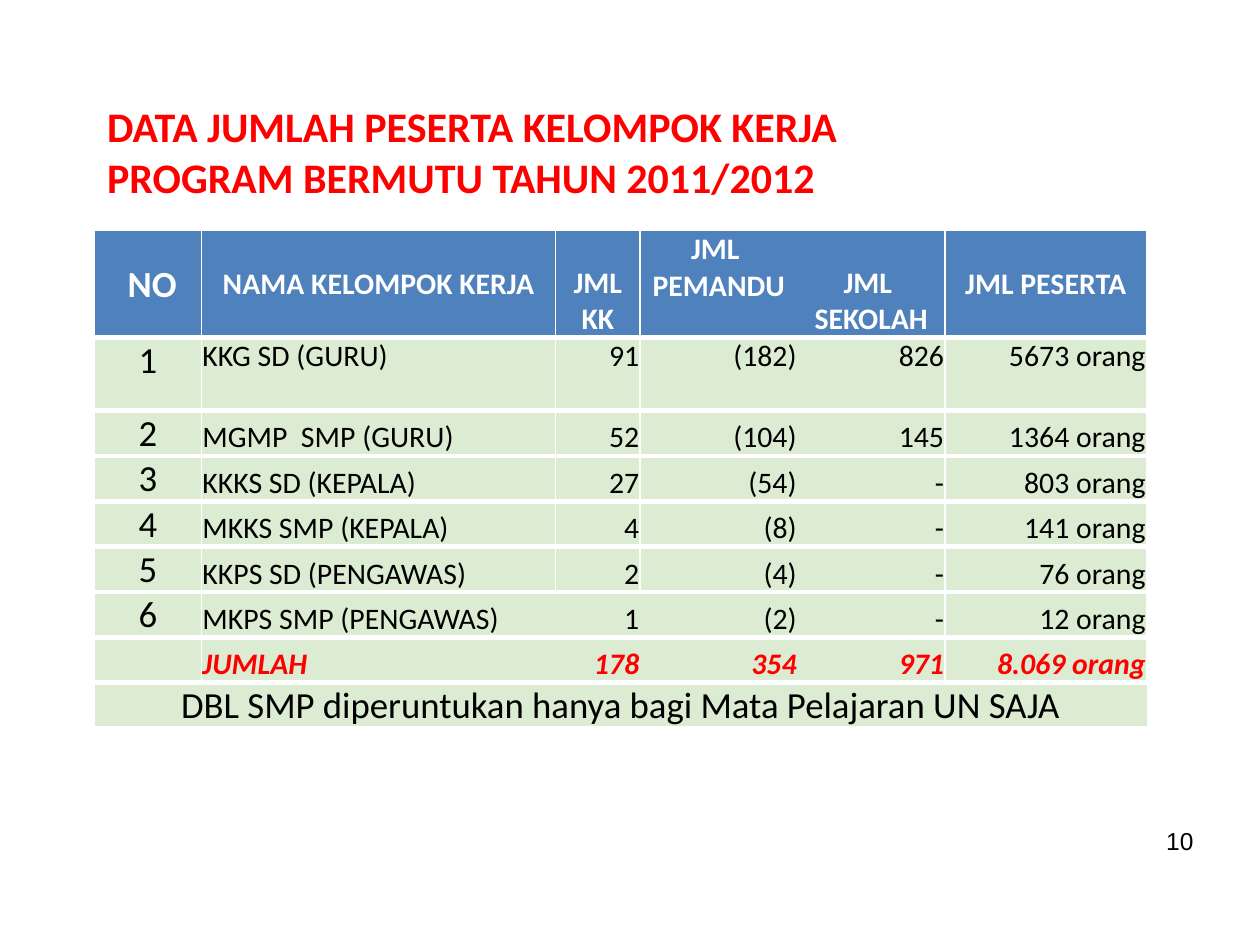
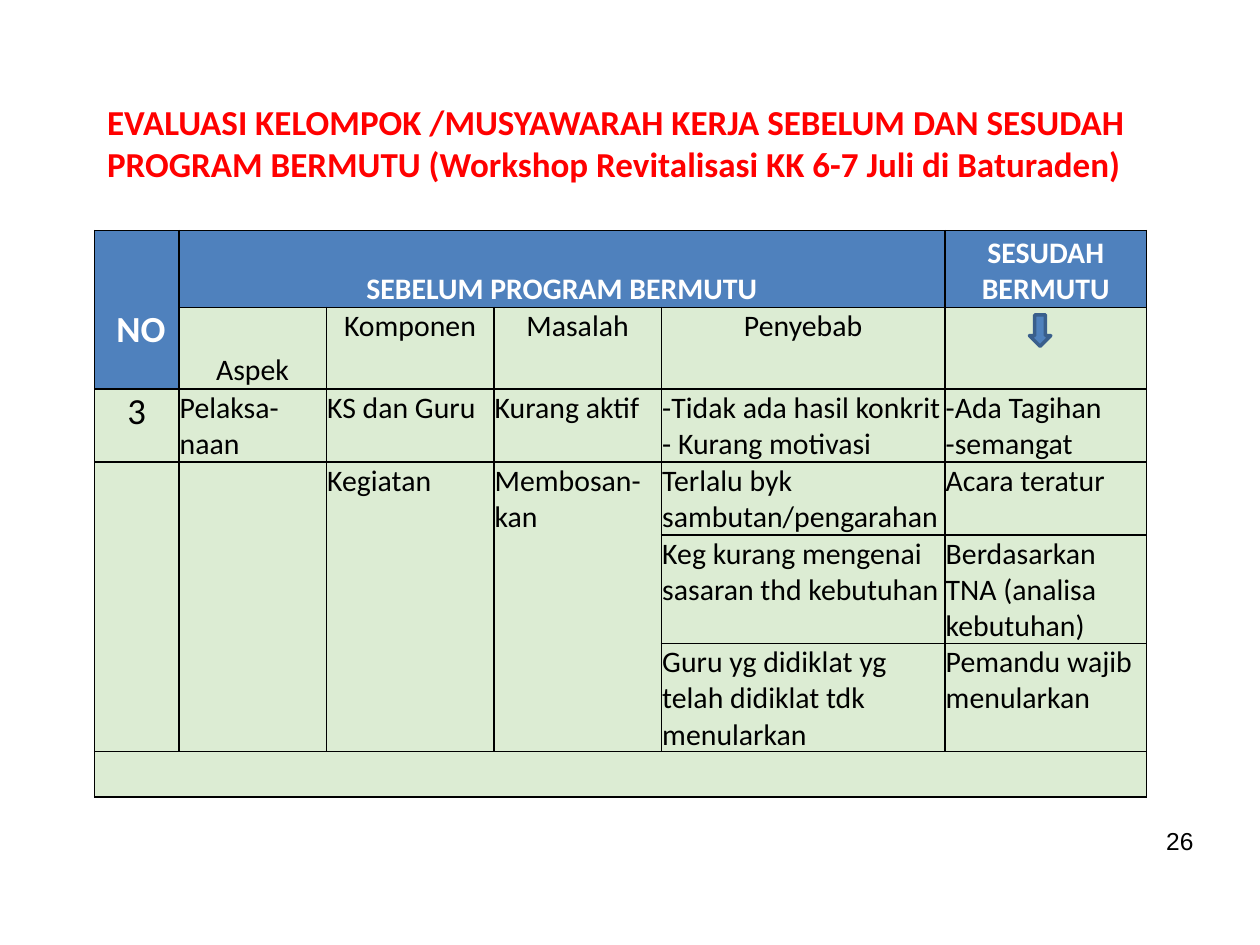
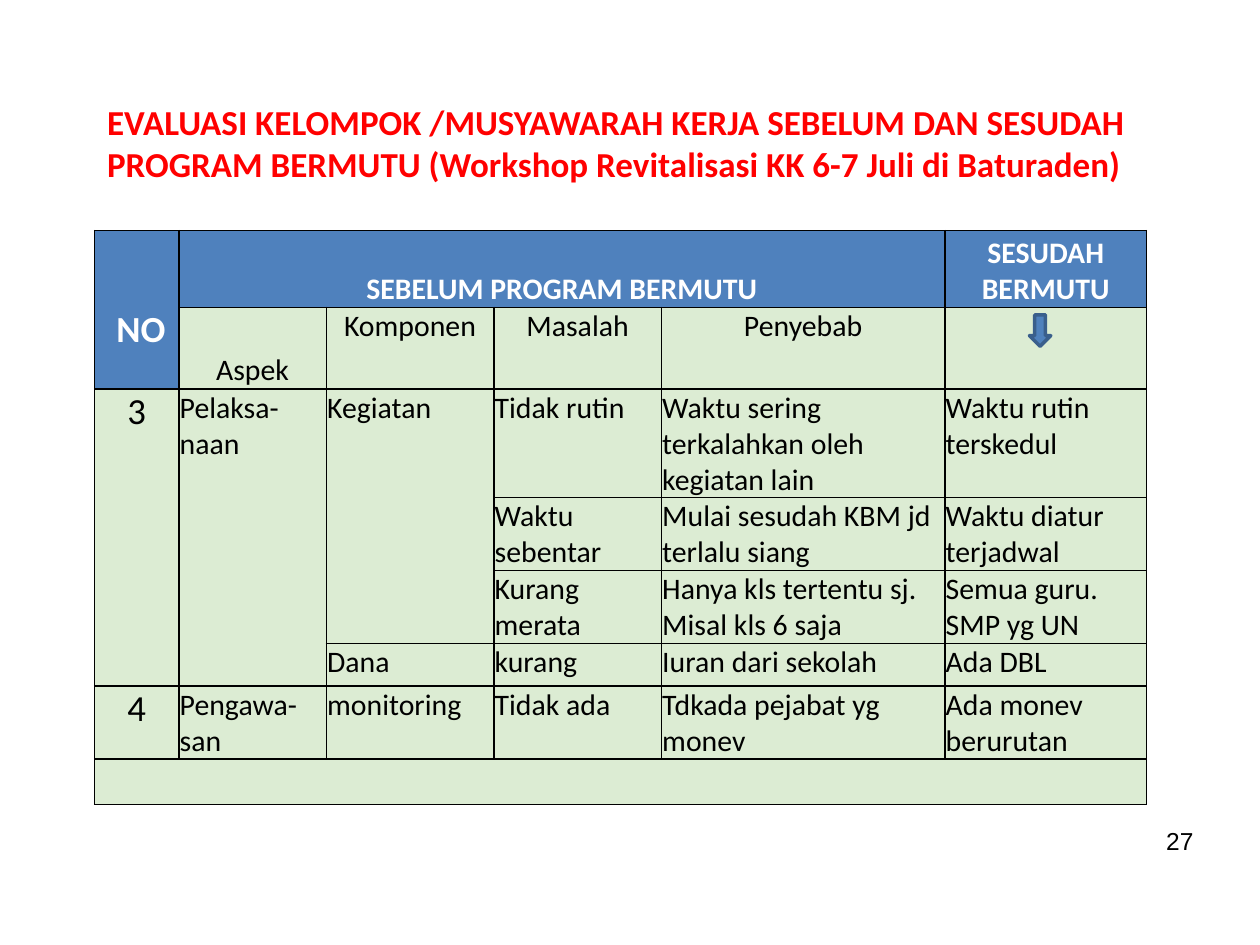
from dataclasses import dataclass, replace
from typing import Optional

from lxml import etree
from pptx import Presentation
from pptx.dml.color import RGBColor
from pptx.enum.shapes import MSO_SHAPE
from pptx.enum.text import MSO_ANCHOR, MSO_AUTO_SIZE, PP_ALIGN
from pptx.oxml.ns import qn
from pptx.util import Inches, Pt

LEFT, CENTER, RIGHT = PP_ALIGN.LEFT, PP_ALIGN.CENTER, PP_ALIGN.RIGHT
TOP, MIDDLE, BOTTOM = MSO_ANCHOR.TOP, MSO_ANCHOR.MIDDLE, MSO_ANCHOR.BOTTOM
DOWN_ARROW = MSO_SHAPE.DOWN_ARROW
NO_AUTOFIT = MSO_AUTO_SIZE.NONE

WHITE = RGBColor(0xFF, 0xFF, 0xFF)
BLACK = RGBColor(0, 0, 0)
RED = RGBColor(0xFF, 0, 0)
BLUE = RGBColor(0x4F, 0x81, 0xBD)
DARK_BLUE = RGBColor(0x3A, 0x5F, 0x8C)
PALE_GREEN = RGBColor(0xDC, 0xEC, 0xD3)

SLIDE_WIDTH, SLIDE_HEIGHT = Inches(10), Inches(7.5)
GRID = 100  # columns and rows of the slide grid
TABLE_LEFT, TABLE_TOP = 7.5, 24.4
TITLE_ONLY = 5
PLAIN_TABLE_STYLE = "{2D5ABB26-0587-4C30-8999-92F81FD0307C}"
NUMBER_SIZE, CELL_SIZE = 21, 17


def across(columns: float) -> int:
    return round(SLIDE_WIDTH * columns / GRID)


def down(rows: float) -> int:
    return round(SLIDE_HEIGHT * rows / GRID)


@dataclass(frozen=True)
class Box:
    """A place on the slide, in grid columns and rows."""
    left: float
    top: float
    width: float
    height: float

    def lengths(self) -> tuple[int, int, int, int]:
        return across(self.left), down(self.top), across(self.width), down(self.height)


@dataclass(frozen=True)
class Entry:
    """A table cell: its text, format and span."""
    text: str = ""
    align: PP_ALIGN = LEFT
    anchor: MSO_ANCHOR = TOP
    size: float = CELL_SIZE
    color: RGBColor = BLACK
    bold: bool = False
    italic: bool = False
    fill: RGBColor = PALE_GREEN
    rows: int = 1
    columns: int = 1
    bottom_gap: float = 0


@dataclass(frozen=True)
class Borders:
    """Line widths in points; a missing line is None."""
    color: RGBColor
    left: Optional[float] = 1
    right: Optional[float] = 1
    top: Optional[float] = 1
    bottom: Optional[float] = 1


PAGE_NUMBER = Box(86.9, 86.8, 8.8, 4.13)
SESUDAH_ARROW = Box(81.7, 33.33, 1.7, 3.33)
BLACK_BORDERS = Borders(BLACK)


def write(frame, text: str, *, size: float, font: str = "Calibri",
          color: RGBColor = BLACK, bold: bool = False, italic: bool = False,
          align: PP_ALIGN = LEFT) -> None:
    """Write one paragraph for each line of the text."""
    for index, line in enumerate(text.split("\n")):
        paragraph = frame.paragraphs[0] if index == 0 else frame.add_paragraph()
        paragraph.alignment = align
        run = paragraph.add_run()
        run.text = line
        run.font.size = Pt(size)
        run.font.name = font
        run.font.color.rgb = color
        run.font.bold = bold
        run.font.italic = italic


def add_titled_slide(deck, title: str, size: float, height: float, page: int):
    slide = deck.slides.add_slide(deck.slide_layouts[TITLE_ONLY])
    heading = slide.shapes.title
    heading.left, heading.top, heading.width, heading.height = Box(7.5, 10, 87.9, height).lengths()
    frame = heading.text_frame
    frame.word_wrap = True
    frame.auto_size = NO_AUTOFIT
    frame.vertical_anchor = TOP
    write(frame, title, size=size, color=RED, bold=True)

    number = slide.shapes.add_textbox(*PAGE_NUMBER.lengths()).text_frame
    number.word_wrap = True
    write(number, str(page), size=14, font="Arial", align=RIGHT)
    return slide


def draw_borders(cell, borders: Borders) -> None:
    properties = cell._tc.get_or_add_tcPr()
    sides = {"a:lnL": borders.left, "a:lnR": borders.right,
             "a:lnT": borders.top, "a:lnB": borders.bottom}
    for tag, width in sides.items():
        line = etree.SubElement(properties, qn(tag), w=str(Pt(width or 0)))
        if width is None:
            etree.SubElement(line, qn("a:noFill"))
        else:
            paint = etree.SubElement(line, qn("a:solidFill"))
            etree.SubElement(paint, qn("a:srgbClr"), val=str(borders.color))


def fill_cell(cell, entry: Entry, borders: Borders) -> None:
    draw_borders(cell, borders)
    cell.fill.solid()
    cell.fill.fore_color.rgb = entry.fill
    cell.margin_left = cell.margin_right = cell.margin_top = Pt(0.5)
    cell.margin_bottom = Inches(entry.bottom_gap)
    cell.vertical_anchor = entry.anchor
    if entry.text:
        write(cell.text_frame, entry.text, size=entry.size, color=entry.color,
              bold=entry.bold, italic=entry.italic, align=entry.align)


def add_grid_table(slide, widths: list[float], heights: list[float],
                   entries: list[list[Optional[Entry]]], borders_at) -> None:
    """Draw a table; None marks a cell covered by a span."""
    box = Box(TABLE_LEFT, TABLE_TOP, sum(widths), sum(heights))
    table = slide.shapes.add_table(len(heights), len(widths), *box.lengths()).table
    table._tbl.tblPr.find(qn("a:tableStyleId")).text = PLAIN_TABLE_STYLE
    table.first_row = table.horz_banding = False
    for column, width in zip(table.columns, widths):
        column.width = across(width)
    for row, height in zip(table.rows, heights):
        row.height = down(height)
    for r, row_entries in enumerate(entries):
        for c, entry in enumerate(row_entries):
            fill_cell(table.cell(r, c), entry or Entry(), borders_at(r, c))
    for r, row_entries in enumerate(entries):
        for c, entry in enumerate(row_entries):
            if entry and (entry.rows, entry.columns) != (1, 1):
                table.cell(r, c).merge(table.cell(r + entry.rows - 1, c + entry.columns - 1))


def header(text: str, anchor: MSO_ANCHOR = BOTTOM, **changes) -> Entry:
    base = Entry(text, CENTER, anchor, color=WHITE, bold=True, fill=BLUE)
    return replace(base, **changes)


def number(text: str, **changes) -> Entry:
    return replace(Entry(text, CENTER, size=NUMBER_SIZE), **changes)


# Participants
PARTICIPANT_WIDTHS = [8.5, 28.1, 6.7, 12.5, 11.7, 16]
PARTICIPANT_HEIGHTS = [11.33, 7.73] + [4.8] * 7
GROUPS = [
    ("KKG SD (GURU)", "91", "(182)", "826", "5673 orang"),
    ("MGMP  SMP (GURU)", "52", "(104)", "145", "1364 orang"),
    ("KKKS SD (KEPALA)", "27", "(54)", "-", "803 orang"),
    ("MKKS SMP (KEPALA)", "4", "(8)", "-", "141 orang"),
    ("KKPS SD (PENGAWAS)", "2", "(4)", "-", "76 orang"),
    ("MKPS SMP (PENGAWAS)", "1", "(2)", "-", "12 orang"),
]
TOTALS = ("JUMLAH", "178", "354", "971", "8.069 orang")


def figures(values: tuple[str, ...], **changes) -> list[Entry]:
    return [replace(Entry(value, RIGHT if c else LEFT, BOTTOM), **changes)
            for c, value in enumerate(values)]


def participant_entries() -> list[list[Optional[Entry]]]:
    rows = [[header(" NO", MIDDLE, size=NUMBER_SIZE),
             header("NAMA KELOMPOK KERJA", MIDDLE), header("JML\nKK"),
             header("JML \nPEMANDU", TOP), header("JML \nSEKOLAH"),
             header("JML PESERTA", MIDDLE)]]
    for order, group in enumerate(GROUPS, 1):
        anchor = TOP if order == 1 else BOTTOM
        rows.append([number(str(order))] + figures(group, anchor=anchor))
    rows.append([Entry()] + figures(TOTALS, color=RED, bold=True, italic=True))
    note = number("DBL SMP diperuntukan hanya bagi Mata Pelajaran UN SAJA", columns=6)
    rows.append([note] + [None] * 5)
    return rows


def participant_borders(row: int, column: int) -> Borders:
    """White rules; the lower rows have fewer column dividers."""
    if row < 6:
        dividers = {0, 1, 2, 3, 5, 6}
    elif row < 8:
        dividers = {0, 1, 5, 6}
    else:
        dividers = {0, 6}
    return Borders(WHITE, left=1 if column in dividers else None,
                   right=1 if column + 1 in dividers else None,
                   top=3 if row else 1, bottom=3)


# Evaluation
EVALUATION_TITLE = ("EVALUASI KELOMPOK /MUSYAWARAH KERJA SEBELUM DAN SESUDAH "
                    "PROGRAM BERMUTU (Workshop Revitalisasi KK 6-7 Juli di Baturaden)")
EVALUATION_WIDTHS = [6.7, 11.7, 13.3, 13.3, 22.5, 16]
HEADER_HEIGHTS = [8.13, 8.53]
FOOT_HEIGHT = 4.8
EVALUATION_HEADER = [
    [header(" NO", size=NUMBER_SIZE, rows=2, bottom_gap=0.29),
     header("SEBELUM PROGRAM BERMUTU", columns=4), None, None, None,
     header("SESUDAH\nBERMUTU")],
    [None, Entry("Aspek", CENTER, BOTTOM)]
    + [Entry(text, CENTER) for text in ("Komponen", "Masalah", "Penyebab", "")],
]
EVALUATION_FOOT = [Entry(columns=6)] + [None] * 5


def texts(*values: str) -> list[Entry]:
    return [Entry(value) for value in values]


IMPLEMENTATION_HEIGHTS = [7.73, 7.73, 11.47, 11.47]
IMPLEMENTATION = [
    [number("3")] + texts("Pelaksa-naan", "KS dan Guru", "Kurang aktif",
                          "-Tidak ada hasil konkrit\n- Kurang motivasi",
                          "-Ada Tagihan\n-semangat"),
    [Entry(rows=3), Entry(rows=3), Entry("Kegiatan", rows=3), Entry("Membosan-kan", rows=3)]
    + texts("Terlalu byk sambutan/pengarahan", "Acara teratur"),
    [None] * 4 + texts("Keg kurang mengenai sasaran thd kebutuhan",
                       "Berdasarkan TNA (analisa kebutuhan)"),
    [None] * 4 + texts("Guru yg didiklat yg telah didiklat tdk menularkan",
                       "Pemandu wajib menularkan"),
]
SUPERVISION_HEIGHTS = [11.47, 7.73, 7.73, 4.53, 7.73]
SUPERVISION = [
    [number("3", rows=4), Entry("Pelaksa-naan", rows=4), Entry("Kegiatan", rows=3)]
    + texts("Tidak rutin", "Waktu sering terkalahkan oleh kegiatan lain",
            "Waktu rutin terskedul"),
    [None] * 3 + texts("Waktu sebentar", "Mulai sesudah KBM jd terlalu siang",
                       "Waktu diatur terjadwal"),
    [None] * 3 + texts("Kurang merata", "Hanya kls tertentu sj. Misal kls 6 saja",
                       "Semua guru.\nSMP yg UN"),
    [None] * 2 + texts("Dana", "kurang", "Iuran dari sekolah", "Ada DBL"),
    [number("4")] + texts("Pengawa-san", "monitoring", "Tidak ada",
                          "Tdkada pejabat yg monev", "Ada monev berurutan"),
]


def add_participants_slide(deck) -> None:
    title = "DATA JUMLAH PESERTA KELOMPOK KERJA\nPROGRAM BERMUTU TAHUN 2011/2012"
    slide = add_titled_slide(deck, title, size=24, height=12.13, page=10)
    add_grid_table(slide, PARTICIPANT_WIDTHS, PARTICIPANT_HEIGHTS,
                   participant_entries(), participant_borders)


def add_evaluation_slide(deck, page: int, heights: list[float],
                         findings: list[list[Optional[Entry]]]) -> None:
    slide = add_titled_slide(deck, EVALUATION_TITLE, size=20, height=10.27, page=page)
    add_grid_table(slide, EVALUATION_WIDTHS, HEADER_HEIGHTS + heights + [FOOT_HEIGHT],
                   EVALUATION_HEADER + findings + [EVALUATION_FOOT],
                   lambda row, column: BLACK_BORDERS)
    arrow = slide.shapes.add_shape(DOWN_ARROW, *SESUDAH_ARROW.lengths())
    arrow.shadow.inherit = False
    arrow.fill.solid()
    arrow.fill.fore_color.rgb = BLUE
    arrow.line.color.rgb = DARK_BLUE
    arrow.line.width = Pt(2)


def main() -> None:
    deck = Presentation()
    deck.slide_width, deck.slide_height = SLIDE_WIDTH, SLIDE_HEIGHT
    add_participants_slide(deck)
    add_evaluation_slide(deck, 26, IMPLEMENTATION_HEIGHTS, IMPLEMENTATION)
    add_evaluation_slide(deck, 27, SUPERVISION_HEIGHTS, SUPERVISION)
    deck.save("out.pptx")


if __name__ == "__main__":
    main()
